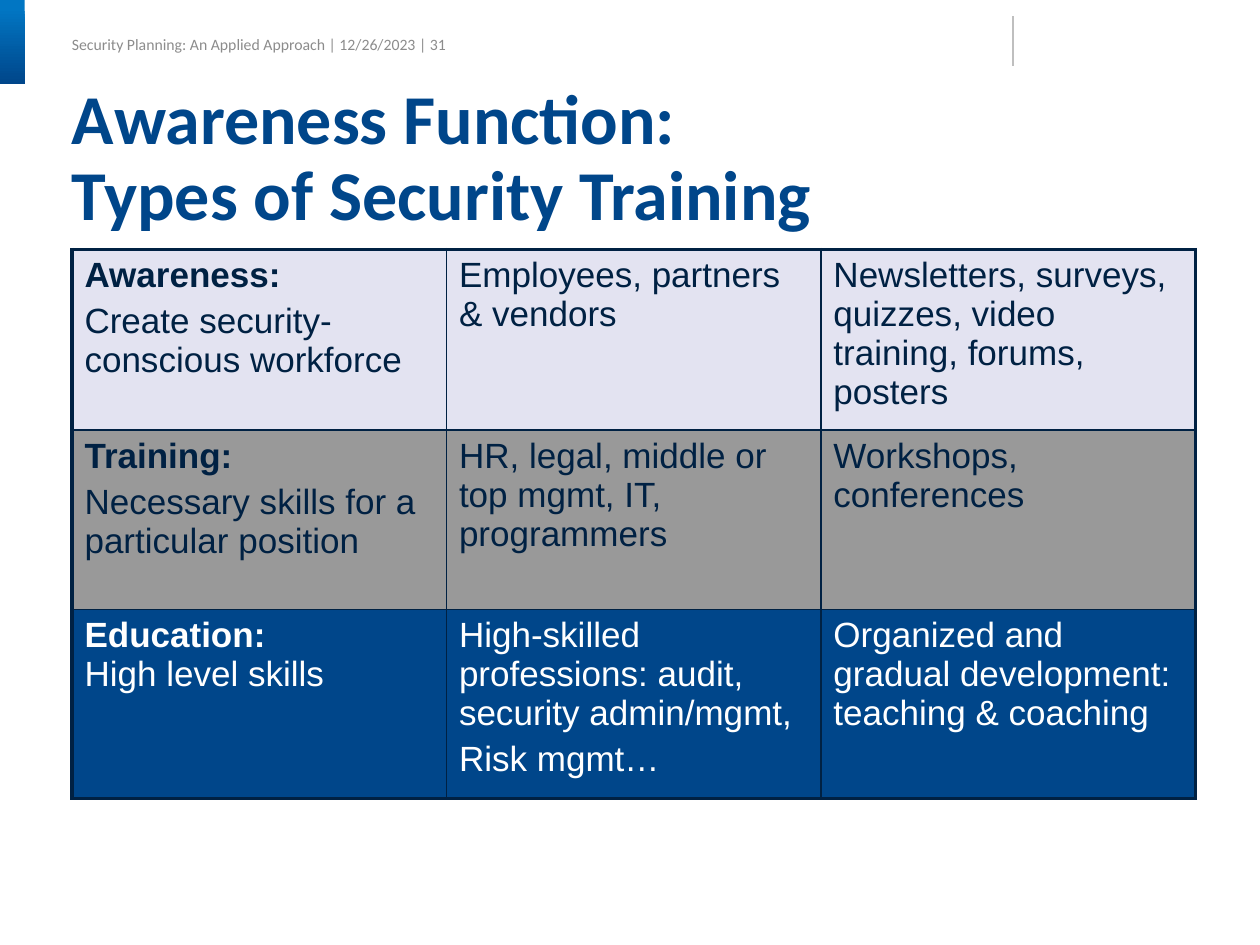
"""Build the slide on the three types of security training."""
from dataclasses import dataclass

from lxml import etree
from pptx import Presentation
from pptx.dml.color import RGBColor
from pptx.enum.shapes import MSO_CONNECTOR, MSO_SHAPE
from pptx.enum.text import MSO_ANCHOR, MSO_AUTO_SIZE, PP_ALIGN
from pptx.oxml.ns import qn
from pptx.util import Cm, Pt

LEFT = PP_ALIGN.LEFT
TOP, MIDDLE = MSO_ANCHOR.TOP, MSO_ANCHOR.MIDDLE
GROW = MSO_AUTO_SIZE.SHAPE_TO_FIT_TEXT
RECTANGLE, STRAIGHT = MSO_SHAPE.RECTANGLE, MSO_CONNECTOR.STRAIGHT


@dataclass(frozen=True)
class Theme:
    blue: str = "00468A"
    bright: str = "0176C3"
    navy: str = "002143"
    lilac: str = "E3E3F1"
    grey: str = "999999"
    header: str = "8C8C8C"
    rule: str = "BFBFBF"
    white: str = "FFFFFF"
    heading_font: str = "Calibri"
    body_font: str = "Arial"
    title_size: float = 40
    body_size: float = 20
    header_size: float = 9
    thin: float = 1
    thick: float = 2.25


THEME = Theme()


def style(font, name, size, color):
    font.name, font.size = name, Pt(size)
    font.color.rgb = RGBColor.from_string(color)


def add_border(cell, position, side, width):
    line = etree.Element(qn(f"a:ln{side}"), w=str(Pt(width)))
    fill = etree.SubElement(line, qn("a:solidFill"))
    etree.SubElement(fill, qn("a:srgbClr"), val=THEME.navy)
    cell._tc.get_or_add_tcPr().insert(position, line)


TRAINING_TYPES = [
    (THEME.lilac, THEME.navy, 3.63, [
        ["Awareness:", "Create security-conscious workforce"],
        ["Employees, partners & vendors"],
        ["Newsletters, surveys, quizzes, video training, forums, posters"],
    ]),
    (THEME.grey, THEME.navy, 3.61, [
        ["Training:", "Necessary skills for a particular position"],
        ["HR, legal, middle or top mgmt, IT, programmers"],
        ["Workshops, conferences"],
    ]),
    (THEME.blue, THEME.white, 3.81, [
        ["Education:\vHigh level skills"],
        ["High-skilled professions: audit, security admin/mgmt,", "Risk mgmt…"],
        ["Organized and gradual development: teaching & coaching"],
    ]),
]
MARGIN, CONTENT_WIDTH = Cm(1.45), Cm(22.65)

prs = Presentation()
prs.slide_width, prs.slide_height = Cm(25.4), Cm(19.05)
slide = prs.slides.add_slide(prs.slide_layouts[5])
shapes = slide.shapes

header = shapes.add_textbox(MARGIN, Cm(0.58), Cm(7.57), Cm(0.58)).text_frame
header.margin_left = header.margin_right = header.margin_bottom = 0
header.margin_top = Cm(0.05)
header.vertical_anchor = MIDDLE
header.word_wrap = False
header.text = "Security Planning: An Applied Approach | 12/26/2023 | 31"
style(header.paragraphs[0].font, THEME.heading_font, THEME.header_size, THEME.header)

corner = shapes.add_shape(RECTANGLE, 0, 0, Cm(0.5), Cm(1.7))
corner.shadow.inherit = False
corner.line.fill.background()
corner.fill.gradient()
corner.fill.gradient_angle = 270
for stop, position, color in zip(
    corner.fill.gradient_stops, (0.1, 1), (THEME.bright, THEME.blue)
):
    stop.position = position
    stop.color.rgb = RGBColor.from_string(color)

divider = shapes.add_connector(STRAIGHT, Cm(20.42), Cm(0.33), Cm(20.42), Cm(1.33))
divider.line.color.rgb = RGBColor.from_string(THEME.rule)
divider.line.width = Pt(0.75)
etree.SubElement(divider._element.spPr, qn("a:effectLst"))

title = shapes.title
title.left, title.top, title.width, title.height = MARGIN, Cm(1.7), CONTENT_WIDTH, Cm(2.24)
heading = title.text_frame
heading.margin_left = heading.margin_top = heading.margin_right = heading.margin_bottom = 0
heading.vertical_anchor = TOP
heading.auto_size = GROW
heading.text = "Awareness Function:\vTypes of Security Training"
heading_line = heading.paragraphs[0]
heading_line.alignment = LEFT
heading_line.line_spacing = 0.9
style(heading_line.font, THEME.heading_font, THEME.title_size, THEME.blue)
heading_line.font.bold = True

row_count, column_count = len(TRAINING_TYPES), len(TRAINING_TYPES[0][3])
table_height = sum(Cm(height) for _, _, height, _ in TRAINING_TYPES)
training = shapes.add_table(
    row_count, column_count, MARGIN, Cm(5.03), CONTENT_WIDTH, table_height
).table
training.first_row = training.horz_banding = False

for row, (fill, ink, height, entries) in enumerate(TRAINING_TYPES):
    training.rows[row].height = Cm(height)
    for column, entry in enumerate(entries):
        cell = training.cell(row, column)
        cell.fill.solid()
        cell.fill.fore_color.rgb = RGBColor.from_string(fill)
        outer_sides = {
            "L": column == 0,
            "R": column == column_count - 1,
            "T": row == 0,
            "B": row == row_count - 1,
        }
        for position, (side, outer) in enumerate(outer_sides.items()):
            add_border(cell, position, side, THEME.thick if outer else THEME.thin)
        for index, text in enumerate(entry):
            if index == 0:
                paragraph = cell.text_frame.paragraphs[0]
            else:
                paragraph = cell.text_frame.add_paragraph()
                paragraph.space_before = Pt(THEME.body_size * 0.2)
            paragraph.text = text
            style(paragraph.font, THEME.body_font, THEME.body_size, ink)
            for run in paragraph.runs:
                run.font.bold = run.text.endswith(":")

prs.save("out.pptx")
